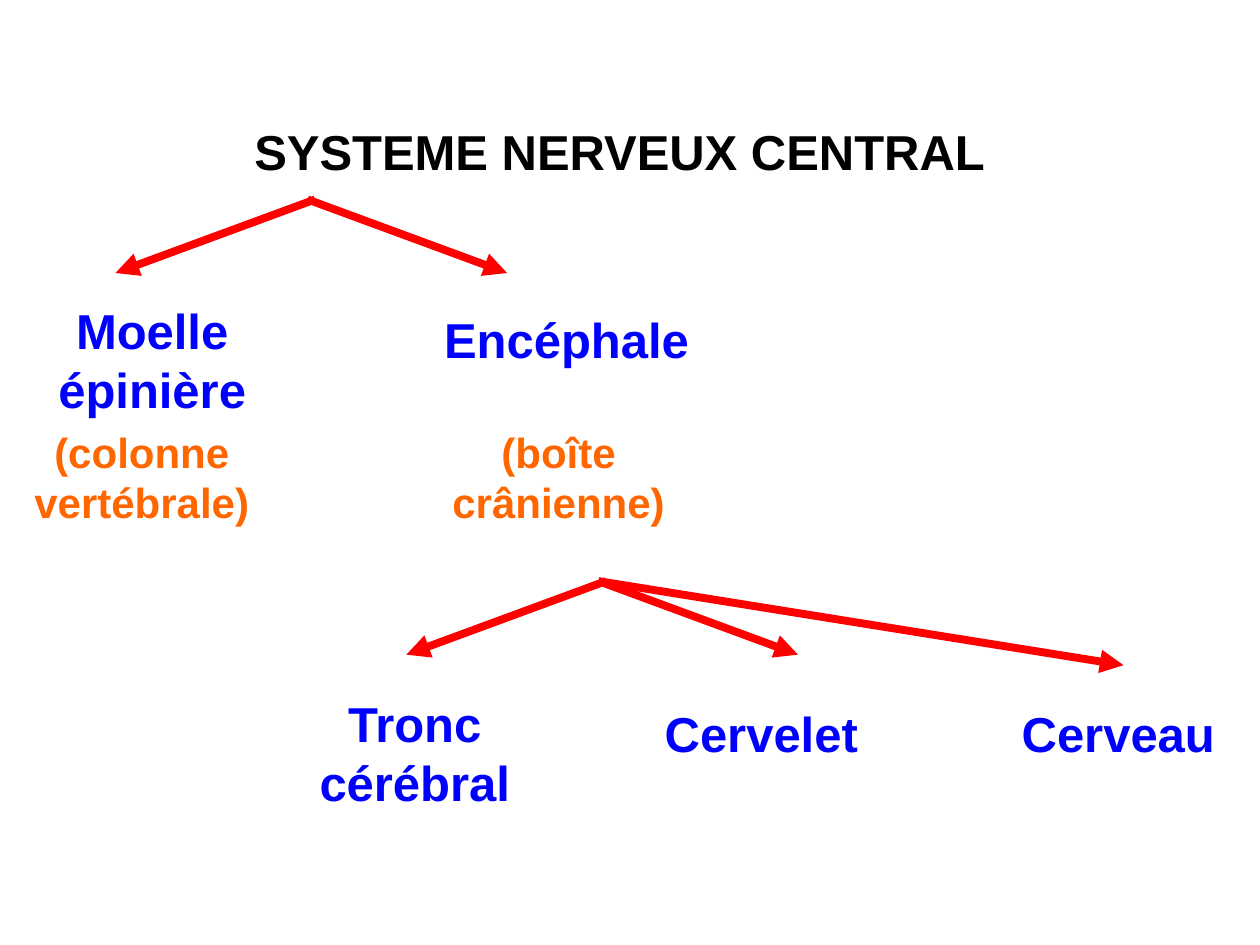
from dataclasses import dataclass

from lxml import etree
from pptx import Presentation
from pptx import util as u
from pptx.dml.color import RGBColor
from pptx.enum import shapes, text
from pptx.oxml.ns import qn


@dataclass(frozen=True)
class Theme:
    font: str = "Arial"
    title: RGBColor = RGBColor(0x00, 0x00, 0x00)
    organ: RGBColor = RGBColor(0x00, 0x00, 0xFF)
    location: RGBColor = RGBColor(0xFF, 0x66, 0x00)
    arrow: RGBColor = RGBColor(0xFF, 0x00, 0x00)
    large: int = 28
    small: int = 24
    arrow_width: float = 4.5


@dataclass(frozen=True)
class Label:
    """Text placed in grid columns and rows."""
    words: str
    column: float
    row: float
    columns: float = 25
    lines: int = 1
    is_location: bool = False


@dataclass(frozen=True)
class Arrow:
    """Start and tip, in grid cells from the apex of a fan."""
    start: float
    across: float
    down: float = 7


@dataclass(frozen=True)
class Fan:
    column: float
    row: float
    arrows: tuple[Arrow, ...]


THEME = Theme()
WIDTH, HEIGHT = u.Inches(10), u.Inches(7.5)
COLUMNS, ROWS = 120, 90
LINE_ROWS = {THEME.large: 5.6, THEME.small: 4.8}
PADDING_ROWS = 1.2

TITLE = Label("SYSTEME NERVEUX CENTRAL", 7, 11, columns=104)
LABELS = (
    Label("Moelle épinière", 2, 28, lines=2),
    Label("Encéphale", 40.2, 28.9, columns=27.5),
    Label("Tronc cérébral", 27, 65.5, lines=2),
    Label("Cervelet", 60, 66.4),
    Label("Cerveau", 94, 66.4),
    Label("(boîte crânienne)", 40.7, 40, lines=2, is_location=True),
    Label("(colonne vertébrale)", 1, 40, lines=2, is_location=True),
)
LEFT, RIGHT, FAR_RIGHT = Arrow(0.7, -18.3), Arrow(0, 19), Arrow(0, 50, 8)
FANS = (
    Fan(29.3, 19, (LEFT, RIGHT)),
    Fan(57, 55.35, (LEFT, RIGHT, FAR_RIGHT)),
)


def x(column: float) -> int:
    return round(WIDTH * column / COLUMNS)


def y(row: float) -> int:
    return round(HEIGHT * row / ROWS)


def write_label(shape, label: Label, color: RGBColor, size: int) -> None:
    rows = label.lines * LINE_ROWS[size] + PADDING_ROWS
    shape.left, shape.top = x(label.column), y(label.row)
    shape.width, shape.height = x(label.columns), y(rows)
    frame = shape.text_frame
    frame.word_wrap = True
    frame.auto_size = text.MSO_AUTO_SIZE.SHAPE_TO_FIT_TEXT
    frame.vertical_anchor = text.MSO_ANCHOR.TOP
    paragraph = frame.paragraphs[0]
    paragraph.alignment = text.PP_ALIGN.CENTER
    run = paragraph.add_run()
    run.text = label.words
    run.font.name, run.font.size, run.font.bold = THEME.font, u.Pt(size), True
    run.font.color.rgb = color


def add_label(slide, label: Label) -> None:
    shape = slide.shapes.add_textbox(0, 0, 0, 0)
    if label.is_location:
        write_label(shape, label, THEME.location, THEME.small)
    else:
        write_label(shape, label, THEME.organ, THEME.large)


def add_fan(slide, fan: Fan) -> None:
    """Draw grouped arrows spreading from one apex."""
    group = slide.shapes.add_group_shape()
    for arrow in fan.arrows:
        connector = group.shapes.add_connector(
            shapes.MSO_CONNECTOR.STRAIGHT,
            x(fan.column + arrow.start), y(fan.row),
            x(fan.column + arrow.across), y(fan.row + arrow.down))
        connector.line.color.rgb = THEME.arrow
        connector.line.width = u.Pt(THEME.arrow_width)
        properties = connector.element.spPr
        outline = properties.find(qn("a:ln"))
        etree.SubElement(outline, qn("a:tailEnd"), type="triangle")
        etree.SubElement(properties, qn("a:effectLst"))


def main() -> None:
    presentation = Presentation()
    presentation.slide_width, presentation.slide_height = WIDTH, HEIGHT
    title_only = presentation.slide_layouts[5]
    slide = presentation.slides.add_slide(title_only)
    write_label(slide.shapes.title, TITLE, THEME.title, THEME.large)
    for fan in FANS:
        add_fan(slide, fan)
    for label in LABELS:
        add_label(slide, label)
    presentation.save("out.pptx")


if __name__ == "__main__":
    main()
